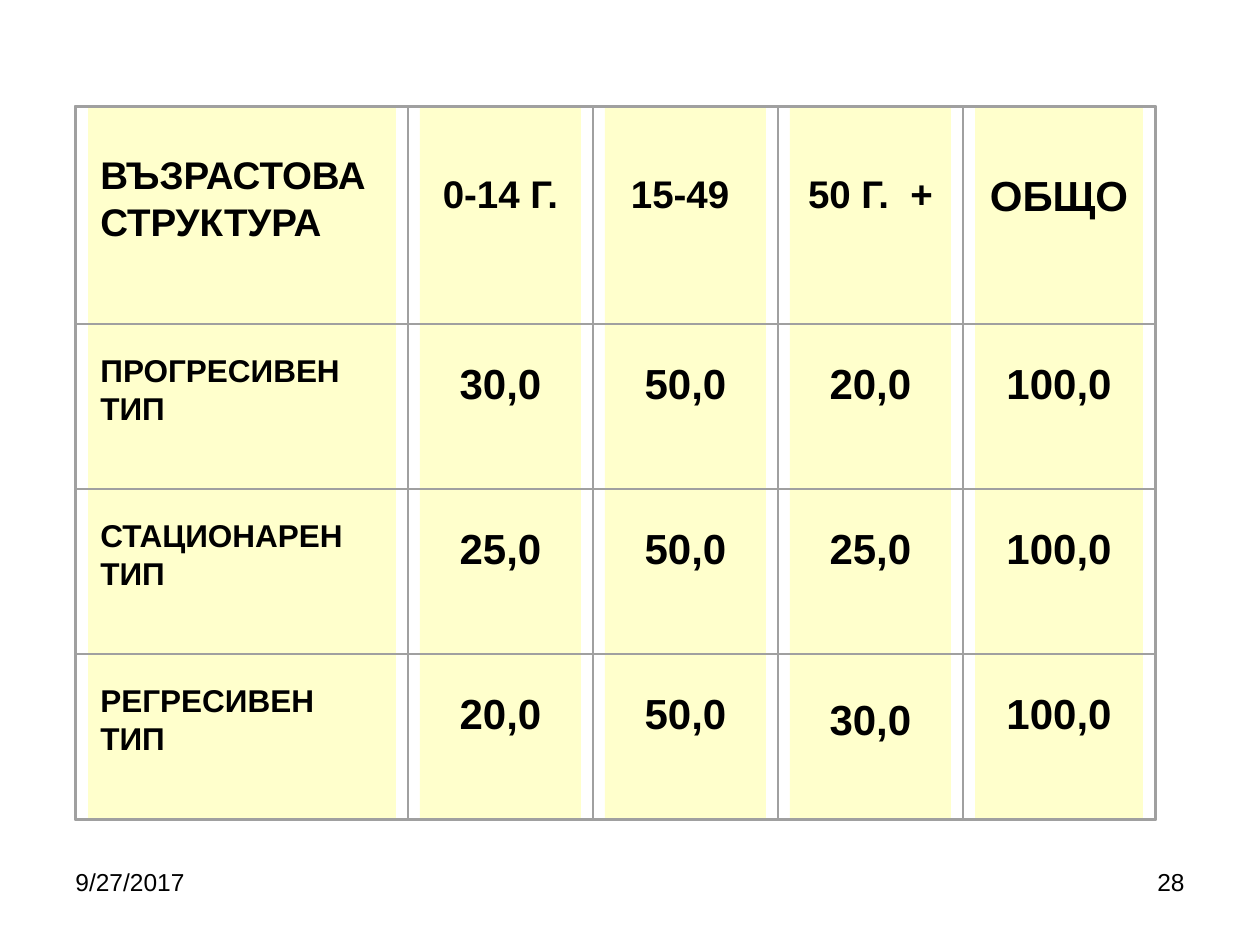
import pptx
import pptx.dml.color
import pptx.enum.shapes
import pptx.enum.text
import pptx.util

PX = 914400 / 126
COLORS = {"cell": "FFFFCC", "rule": "A0A0A0", "text": "000000"}
ALIGN = pptx.enum.text.PP_ALIGN
WIDTHS = [332, 185, 185, 185, 192]
HEIGHTS = [217, 165, 165, 165]
GAP = 12  # white strip on each side of a cell's fill
PAD = 6
HEAD = ["ВЪЗРАСТОВА СТРУКТУРА", "0-14 Г.", "15-49 ", "50 Г.  +", "ОБЩО"]
ROWS = [
    ["ПРОГРЕСИВЕН ТИП", "30,0", "50,0", "20,0", "100,0"],
    ["СТАЦИОНАРЕН ТИП", "25,0", "50,0", "25,0", "100,0"],
    ["РЕГРЕСИВЕН ТИП", "20,0", "50,0", "30,0", "100,0"],
]


def px(num):
    return pptx.util.Emu(round(num * PX))


def rgb(name):
    return pptx.dml.color.RGBColor.from_string(COLORS[name])


def add_rect(slide, box, fill=None, line=None, width=0):
    kind = pptx.enum.shapes.MSO_SHAPE.RECTANGLE
    rect = slide.shapes.add_shape(kind, *map(px, box))
    rect.shadow.inherit = False
    if fill:
        rect.fill.solid()
        rect.fill.fore_color.rgb = rgb(fill)
    else:
        rect.fill.background()
    if line:
        rect.line.color.rgb = rgb(line)
        rect.line.width = pptx.util.Pt(width)
    else:
        rect.line.fill.background()
    return rect


def set_text(shape, text, size, align, bold=False):
    frame = shape.text_frame
    frame.word_wrap = True
    para = frame.paragraphs[0]
    para.text = text
    para.alignment = align
    para.font.name = "Arial"
    para.font.size = pptx.util.Pt(size)
    para.font.bold = bold
    para.font.color.rgb = rgb("text")


def add_cell(slide, box, text, size, align, lift):
    """Draw one ruled cell; lift is the room kept free below its text."""
    left, top, width, height = box
    cell = add_rect(slide, (left + GAP, top, width - 2 * GAP, height), fill="cell")
    set_text(cell, text, size, align, bold=True)
    cell.text_frame.vertical_anchor = pptx.enum.text.MSO_ANCHOR.MIDDLE
    cell.text_frame.margin_bottom = px(lift)
    add_rect(slide, box, line="rule")


def text_size(row, col):
    if row == 0:
        return 24 if col == len(HEAD) - 1 else 22
    return 18 if col == 0 else 24


def text_lift(row, col):
    if (row, col) == (0, len(HEAD) - 1):
        return 48
    if col == 0 or (row, col) == (3, 3):
        return PAD + 36
    return PAD + 2 * text_size(row, col)


def add_grid(slide, left, top):
    y = top
    for row, (texts, height) in enumerate(zip([HEAD, *ROWS], HEIGHTS)):
        x = left
        for col, (text, width) in enumerate(zip(texts, WIDTHS)):
            align = ALIGN.CENTER if col else ALIGN.JUSTIFY
            add_cell(slide, (x, y, width, height), text,
                     text_size(row, col), align, text_lift(row, col))
            x += width
        y += height
    frame = (left - 1, top - 1, sum(WIDTHS) + 2, sum(HEIGHTS) + 2)
    add_rect(slide, frame, line="rule", width=0.87)


def add_foot(slide, left, top, width, height):
    box = 294
    parts = [("9/27/2017", left, ALIGN.LEFT),
             ("28", left + width - box, ALIGN.RIGHT)]
    for text, x, align in parts:
        note = slide.shapes.add_textbox(*map(px, (x, top, box, height)))
        set_text(note, text, 14, align)


def main():
    deck = pptx.Presentation()
    deck.slide_width, deck.slide_height = px(1260), px(945)
    slide = deck.slides.add_slide(deck.slide_layouts[6])
    add_grid(slide, 76, 107)
    add_foot(slide, 63, 861, 1134, 66)
    deck.save("out.pptx")


if __name__ == "__main__":
    main()
